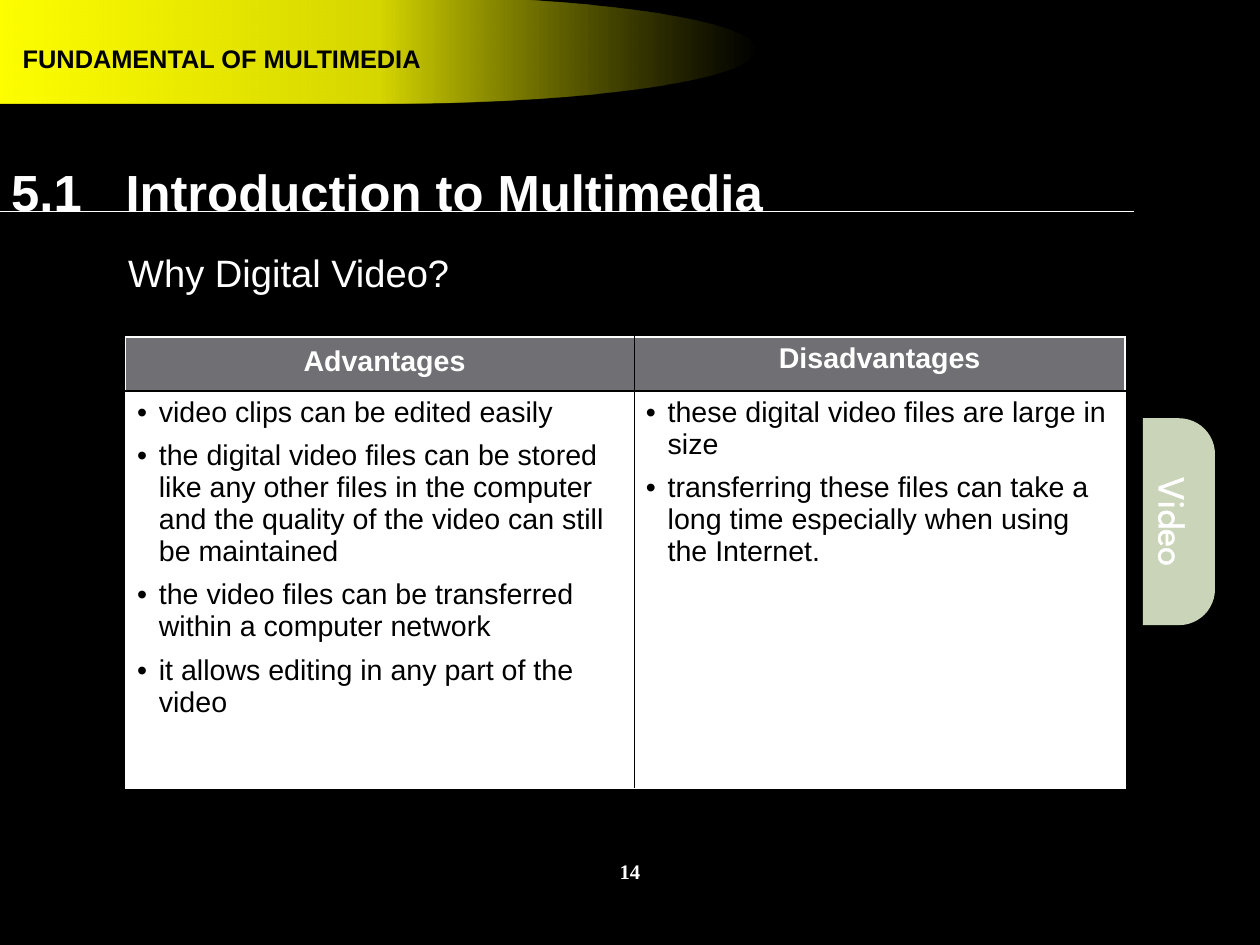
import pptx
import pptx.util
import pptx.dml.color
import pptx.enum.shapes
import pptx.enum.text
import pptx.oxml
import pptx.oxml.ns

Pt = pptx.util.Pt
SHAPE = pptx.enum.shapes.MSO_SHAPE
ALIGN = pptx.enum.text.PP_ALIGN
MIDDLE = pptx.enum.text.MSO_ANCHOR.MIDDLE
GROW = pptx.enum.text.MSO_AUTO_SIZE.SHAPE_TO_FIT_TEXT
RGB = pptx.dml.color.RGBColor.from_string
NS = pptx.oxml.ns.nsdecls("a")

COLORS = {
    "black": "000000", "white": "FFFFFF", "header": "6F6F74", "sage": "CAD4B8",
    "olive": "979700", "mustard": "D7D700", "yellow": "FFFF00",
}

deck = pptx.Presentation()
deck.slide_width = pptx.util.Cm(28)
deck.slide_height = pptx.util.Cm(21)
slide = deck.slides.add_slide(deck.slide_layouts[6])
slide.background.fill.solid()
slide.background.fill.fore_color.rgb = RGB(COLORS["black"])


def place(left, top, width, height):
    """Turn percentages of the slide's width and height into lengths."""
    across, down = deck.slide_width / 100, deck.slide_height / 100
    return [round(v) for v in (left * across, top * down, width * across, height * down)]


def write(paragraph, text, color, size, bold=False, font="Arial"):
    run = paragraph.add_run()
    run.text = text
    for name, value in {"size": Pt(size), "bold": bold, "name": font}.items():
        setattr(run.font, name, value)
    run.font.color.rgb = RGB(COLORS[color])
    return run


# Banner fading out to the right
banner = slide.shapes.add_shape(SHAPE.FLOWCHART_DELAY, *place(0, -0.45, 60.07, 11.4))
banner.shadow.inherit = False
banner.line.fill.background()
banner.fill.gradient()
banner.fill.gradient_angle = 180
stops = banner.fill.gradient_stops
stops[0].color.rgb, stops[1].color.rgb = RGB(COLORS["olive"]), RGB(COLORS["yellow"])
stops[0].position, stops[1].position = 0, 1
stop_list = banner.fill._fill._gradFill.gsLst
stop_list[0][0].append(pptx.oxml.parse_xml(f'<a:alpha {NS} val="0"/>'))
stop_list.insert(1, pptx.oxml.parse_xml(
    f'<a:gs {NS} pos="50000"><a:srgbClr val="{COLORS["mustard"]}"/></a:gs>'))

# Rule under the title
rule_left, rule_top, rule_width, _ = place(0, 22.37, 90, 0)
title_rule = slide.shapes.add_connector(
    pptx.enum.shapes.MSO_CONNECTOR.STRAIGHT, rule_left, rule_top, rule_width, rule_top)
title_rule.line.color.rgb = RGB(COLORS["white"])
title_rule.line.width = Pt(0.75)
title_rule._element.spPr.append(pptx.oxml.parse_xml(f"<a:effectLst {NS}/>"))

# Chapter tab on the right edge
chapter_tab = slide.shapes.add_shape(
    SHAPE.ROUND_2_SAME_RECTANGLE, *place(85.36, 51.4, 16.42, 7.62))
chapter_tab.rotation = 90
chapter_tab.adjustments[0], chapter_tab.adjustments[1] = 0.5, 0
chapter_tab.shadow.inherit = False
chapter_tab.line.fill.background()
chapter_tab.fill.solid()
chapter_tab.fill.fore_color.rgb = RGB(COLORS["sage"])
chapter_tab.text_frame.vertical_anchor = MIDDLE
chapter_name = chapter_tab.text_frame.paragraphs[0]
chapter_name.alignment = ALIGN.CENTER
chapter_name.space_before = Pt(4.4)
chapter_run = write(chapter_name, "Video", "white", 24, font="League Spartan")
chapter_run._r.rPr.insert(0, pptx.oxml.parse_xml(
    f'<a:ln {NS} w="{Pt(1.45)}"><a:solidFill><a:srgbClr val="{COLORS["white"]}"/>'
    "</a:solidFill></a:ln>"))

# Headings and page number: place, text, run look, frame format, paragraph format
INSETS = ("margin_left", "margin_top", "margin_right", "margin_bottom")
LABELS = [
    (place(44.15, 89.95, 11.7, 4.45), "14", ("white", 13, True, "Times New Roman"),
     {"word_wrap": True, "vertical_anchor": MIDDLE, **dict.fromkeys(INSETS, 0)},
     {"alignment": ALIGN.CENTER}),
    (place(0.73, 2.36, 33.76, 5.44), "FUNDAMENTAL OF MULTIMEDIA", ("black", 16, True),
     {"word_wrap": False, "auto_size": GROW},
     {"alignment": ALIGN.CENTER, "line_spacing": 1.5}),
    (place(9.28, 23.34, 27.59, 7.62), "Why Digital Video?", ("white", 24),
     {"word_wrap": False, "auto_size": GROW},
     {"line_spacing": 1.5, "space_before": Pt(1)}),
    (place(0, 13.78, 100, 9.79), "5.1 \tIntroduction to Multimedia", ("white", 32, True),
     {"word_wrap": True, "auto_size": GROW, "vertical_anchor": MIDDLE},
     {"line_spacing": 1.5}),
]
for box, wording, look, frame_format, paragraph_format in LABELS:
    frame = slide.shapes.add_textbox(*box).text_frame
    heading = frame.paragraphs[0]
    for target, values in ((frame, frame_format), (heading, paragraph_format)):
        for name, value in values.items():
            setattr(target, name, value)
    write(heading, wording, *look)
    if wording.startswith("Why"):
        indent = pptx.util.Inches(0.25)
        heading._p.get_or_add_pPr().set("marL", str(indent))
        heading._p.pPr.set("indent", str(-indent))

# Comparison table
COMPARISON = {
    "Advantages": [
        "video clips can be edited easily",
        "the digital video files can be stored like any other files in the computer "
        "and the quality of the video can still be maintained",
        "the video files can be transferred within a computer network",
        "it allows editing in any part of the video",
    ],
    "Disadvantages": [
        "these digital video files are large in size",
        "transferring these files can take a long time especially when using the Internet.",
    ],
}
comparison = slide.shapes.add_table(2, 2, *place(9.98, 35.67, 79.3, 47.78)).table
comparison.first_row = comparison.horz_banding = False
for column, share in zip(comparison.columns, (40.38, 38.92)):
    column.width = round(deck.slide_width * share / 100)
for row, share in zip(comparison.rows, (5.72, 42.06)):
    row.height = round(deck.slide_height * share / 100)

hanging = pptx.util.Inches(0.19)
for col, (side, points) in enumerate(COMPARISON.items()):
    header, body = comparison.cell(0, col), comparison.cell(1, col)
    header_line = header.text_frame.paragraphs[0]
    header_line.alignment = ALIGN.CENTER
    if col == 0:
        write(header_line, " ", "white", 20, True)
    write(header_line, side, "white", 18, True)

    for number, point in enumerate(points):
        frame = body.text_frame
        item = frame.add_paragraph() if number else frame.paragraphs[0]
        item.space_before, item.space_after = Pt(1), Pt(6)
        properties = item._p.get_or_add_pPr()
        properties.set("marL", str(hanging))
        properties.set("indent", str(-hanging))
        properties.append(pptx.oxml.parse_xml(f'<a:buFont {NS} typeface="Arial"/>'))
        properties.append(pptx.oxml.parse_xml(f'<a:buChar {NS} char="•"/>'))
        write(item, point, "black", 18)

    for row, (cell, fill) in enumerate(((header, "header"), (body, "white"))):
        outer_edges = {"L": col == 0, "R": col == 1, "T": row == 0, "B": row == 1}
        for edge, outer in outer_edges.items():
            shade = COLORS["white" if outer else "black"]
            cell._tc.get_or_add_tcPr().append(pptx.oxml.parse_xml(
                f'<a:ln{edge} {NS} w="{Pt(1)}"><a:solidFill><a:srgbClr val="{shade}"/>'
                f"</a:solidFill></a:ln{edge}>"))
        cell.fill.solid()
        cell.fill.fore_color.rgb = RGB(COLORS[fill])

deck.save("out.pptx")
